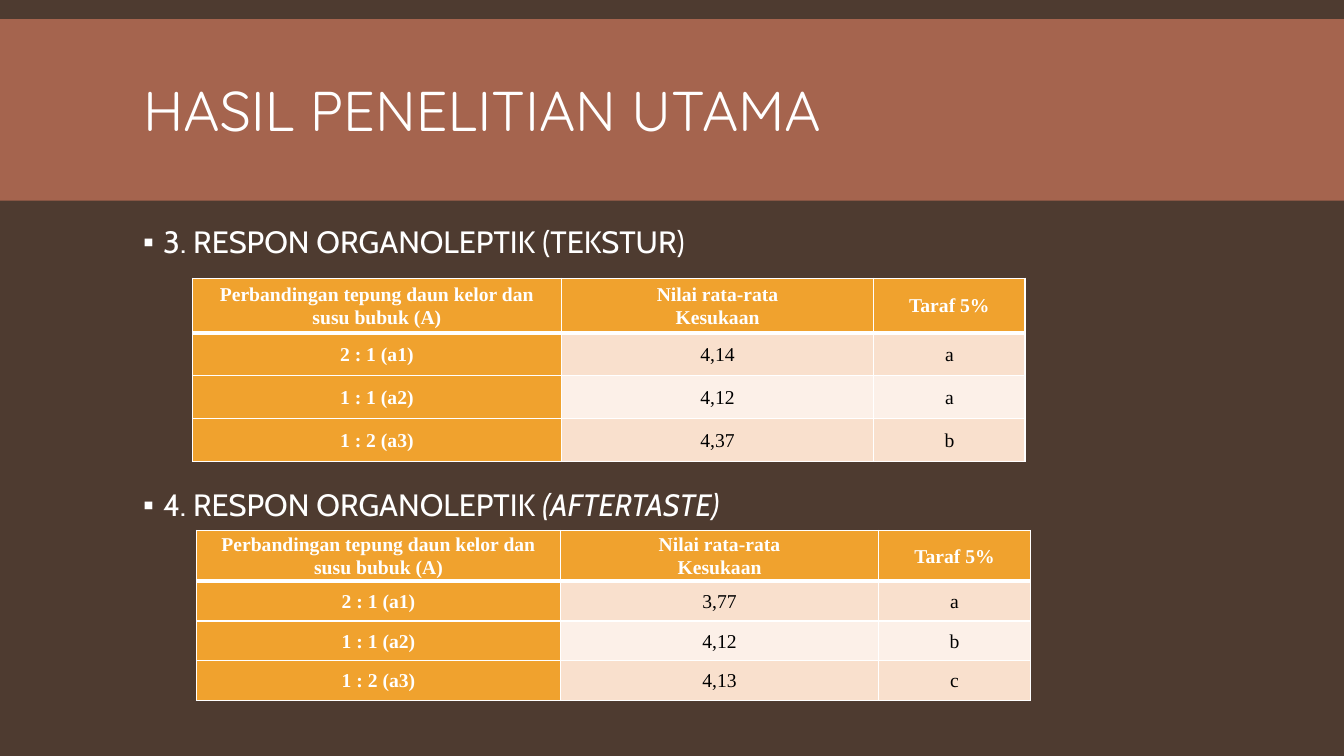
from lxml.etree import SubElement
from pptx import Presentation
from pptx.dml.color import RGBColor
from pptx.enum.shapes import MSO_SHAPE
from pptx.enum.text import MSO_ANCHOR, MSO_AUTO_SIZE, PP_ALIGN
from pptx.oxml import parse_xml
from pptx.oxml.ns import nsdecls, qn
from pptx.util import Pt

BROWN = RGBColor(0x4E, 0x3B, 0x30)
RUST = RGBColor(0xA5, 0x64, 0x4E)
ORANGE = RGBColor(0xF0, 0xA2, 0x2E)
PEACH = RGBColor(0xF9, 0xE0, 0xCD)
CREAM = RGBColor(0xFC, 0xF0, 0xE8)
WHITE = RGBColor(0xFF, 0xFF, 0xFF)
BLACK = RGBColor(0, 0, 0)

TITLE = "HASIL PENELITIAN UTAMA"
# Each heading: runs as (text, italic), then the space before it
HEADINGS = [
    ([("3. RESPON ORGANOLEPTIK (TEKSTUR)", False)], 12),
    ([("4. RESPON ORGANOLEPTIK ", False), ("(AFTERTASTE)", True)], 162.5),
]
HEADER = ["Perbandingan tepung daun kelor dan susu bubuk (A)",
          "Nilai rata-rata\nKesukaan", "Taraf 5%"]
RATIOS = ["2 : 1 (a1)", "1 : 1 (a2)", "1 : 2 (a3)"]
RESPONSES = [
    {"scores": ["4,14", "4,12", "4,37"], "levels": "aab", "corner": (137.5, 198.7),
     "widths": [263.5, 223.2, 108], "heights": [39, 30.7, 30.6, 30.6]},
    {"scores": ["3,77", "4,12", "4,13"], "levels": "abc", "corner": (140.4, 379),
     "widths": [260, 227.2, 108.5], "heights": [36, 28.6, 28.3, 28.3]},
]


def apply(target, values):
    for name, value in values.items():
        setattr(target, name, value)


def place(shape, left, top, width, height):
    apply(shape, {"left": Pt(left), "top": Pt(top),
                  "width": Pt(width), "height": Pt(height)})


def write_run(paragraph, text, color, **font):
    run = paragraph.add_run()
    run.text = text
    apply(run.font, font)
    run.font.color.rgb = color


def add_bullet(paragraph):
    properties = paragraph._p.get_or_add_pPr()
    properties.set("marL", str(Pt(14.4)))
    properties.set("indent", str(-Pt(14.4)))
    color = SubElement(properties, qn("a:buClr"))
    SubElement(color, qn("a:srgbClr"), val=str(WHITE))
    SubElement(properties, qn("a:buFont"), typeface="Arial")
    SubElement(properties, qn("a:buChar"), char="▪")


def add_borders(cell, top, bottom):
    properties = cell._tc.get_or_add_tcPr()
    sides = [("L", 1), ("R", 1), ("T", top), ("B", bottom)]
    for position, (side, width) in enumerate(sides):
        properties.insert(position, parse_xml(
            f'<a:ln{side} {nsdecls("a")} w="{Pt(width)}"><a:solidFill>'
            f'<a:srgbClr val="{WHITE}"/></a:solidFill></a:ln{side}>'))


def fill_cell(cell, text, row, column):
    heading = row == 0 or column == 0
    cell.fill.solid()
    cell.fill.fore_color.rgb = ORANGE if heading else (PEACH if row % 2 else CREAM)
    add_borders(cell, top=3 if row == 1 else 1, bottom=3 if row == 0 else 1)
    apply(cell, {"vertical_anchor": MSO_ANCHOR.MIDDLE,
                 "margin_left": Pt(5), "margin_right": Pt(5),
                 "margin_top": 0, "margin_bottom": 0})
    for number, line in enumerate(text.split("\n")):
        frame = cell.text_frame
        paragraph = frame.add_paragraph() if number else frame.paragraphs[0]
        apply(paragraph, {"alignment": PP_ALIGN.CENTER, "line_spacing": 1.07})
        write_run(paragraph, line, WHITE if heading else BLACK,
                  name="Times New Roman", size=Pt(14), bold=heading)


def add_response(slide, response):
    grid = [HEADER, *zip(RATIOS, response["scores"], response["levels"])]
    widths, heights = response["widths"], response["heights"]
    size = sum(widths), sum(heights)
    table = slide.shapes.add_table(
        len(grid), len(HEADER), *map(Pt, response["corner"] + size)).table
    for column, width in zip(table.columns, widths):
        column.width = Pt(width)
    for row, height in zip(table.rows, heights):
        row.height = Pt(height)
    for r, texts in enumerate(grid):
        for c, text in enumerate(texts):
            fill_cell(table.cell(r, c), text, r, c)


def main():
    deck = Presentation()
    apply(deck, {"slide_width": Pt(960), "slide_height": Pt(540)})
    slide = deck.slides.add_slide(deck.slide_layouts[1])
    slide.background.fill.solid()
    slide.background.fill.fore_color.rgb = BROWN
    title, body = slide.placeholders

    band = slide.shapes.add_shape(MSO_SHAPE.RECTANGLE, 0, Pt(13.7), Pt(960), Pt(129.6))
    band.shadow.inherit = False
    band.fill.solid()
    band.fill.fore_color.rgb = RUST
    band.line.fill.background()
    title.element.addprevious(band.element)  # behind the title

    place(title, 95, 22.3, 770.4, 118.8)
    place(body, 95, 158.4, 770.4, 331.2)
    for holder, anchor in [(title, MSO_ANCHOR.MIDDLE), (body, MSO_ANCHOR.TOP)]:
        apply(holder.text_frame, {"vertical_anchor": anchor, "word_wrap": True,
                                  "auto_size": MSO_AUTO_SIZE.NONE})

    heading = title.text_frame.paragraphs[0]
    apply(heading, {"alignment": PP_ALIGN.LEFT, "line_spacing": 0.85})
    write_run(heading, TITLE, WHITE, name="Quicksand", size=Pt(40))

    for number, (runs, space_before) in enumerate(HEADINGS):
        frame = body.text_frame
        paragraph = frame.add_paragraph() if number else frame.paragraphs[0]
        apply(paragraph, {"line_spacing": 0.9, "space_before": Pt(space_before),
                          "space_after": Pt(2)})
        add_bullet(paragraph)
        for text, italic in runs:
            write_run(paragraph, text, WHITE, name="Cabin", size=Pt(22), italic=italic)

    for response in RESPONSES:
        add_response(slide, response)
    deck.save("out.pptx")


if __name__ == "__main__":
    main()
